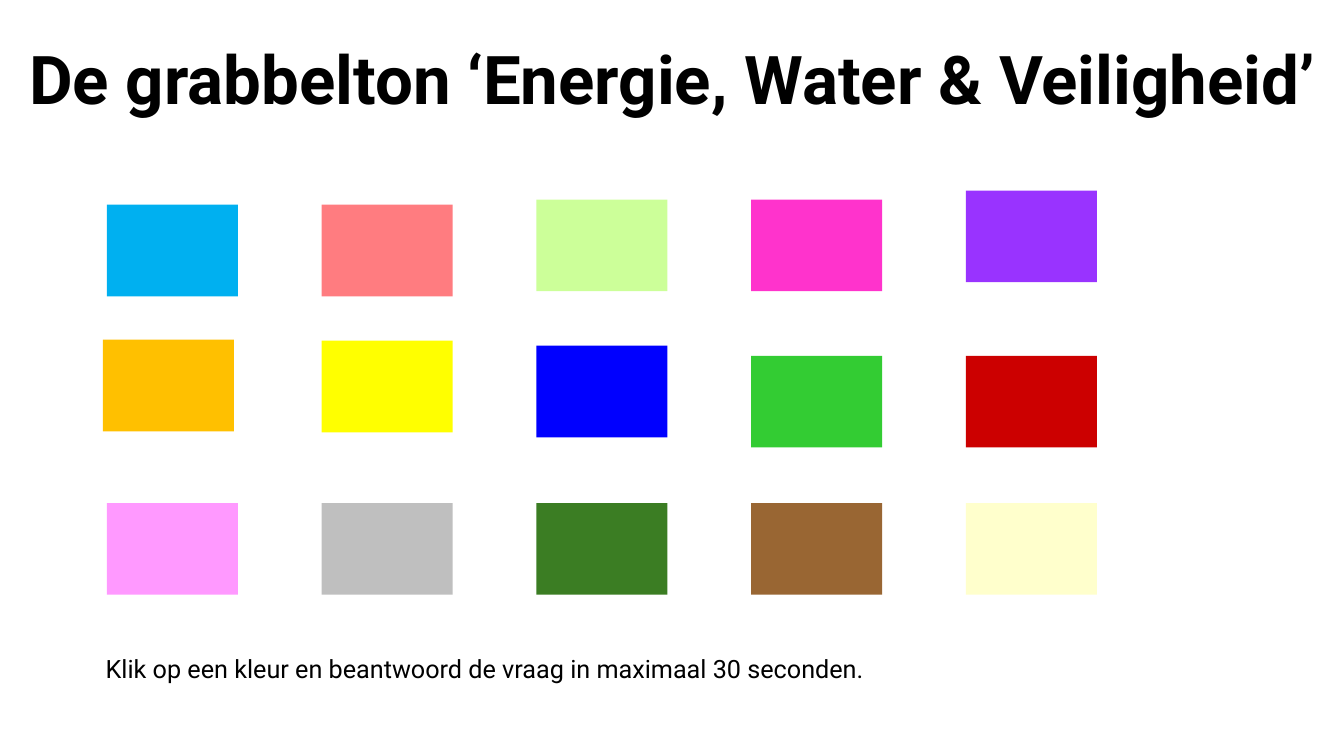
"""Build the colour grab-bag quiz slide on energy, water and safety."""
from dataclasses import dataclass

from pptx import Presentation
from pptx.dml.color import RGBColor
from pptx.enum.shapes import MSO_SHAPE
from pptx.enum.text import MSO_AUTO_SIZE, PP_ALIGN
from pptx.slide import Slide
from pptx.util import Inches, Pt

RECTANGLE = MSO_SHAPE.RECTANGLE
GROW = MSO_AUTO_SIZE.SHAPE_TO_FIT_TEXT
LEFT, CENTER = PP_ALIGN.LEFT, PP_ALIGN.CENTER

FONT = "Roboto"
COLORS = {
    "text": "000000", "sky": "00B0F0", "salmon": "FF7C80", "lime": "CCFF99",
    "magenta": "FF33CC", "purple": "9933FF", "orange": "FFC000",
    "yellow": "FFFF00", "blue": "0000FF", "green": "33CC33", "red": "CC0000",
    "pink": "FF99FF", "grey": "BFBFBF", "forest": "3B7D23",
    "brown": "996633", "cream": "FFFFCC",
}
GRID_LEFT, COLUMN_PITCH = 1.06, 2.13
CARD_WIDTH, CARD_HEIGHT = 1.3, 0.91


@dataclass(frozen=True)
class Card:
    color: str
    top: float
    shift: float = 0


@dataclass(frozen=True)
class Caption:
    text: str
    left: float
    top: float
    width: float
    height: float
    size: int
    bold: bool = False
    alignment: PP_ALIGN = LEFT


CARD_ROWS = [
    [Card("sky", 2.03), Card("salmon", 2.03), Card("lime", 1.98),
     Card("magenta", 1.98), Card("purple", 1.89)],
    [Card("orange", 3.37, -0.04), Card("yellow", 3.38), Card("blue", 3.43),
     Card("green", 3.53), Card("red", 3.53)],
    [Card(color, 4.99) for color in ("pink", "grey", "forest", "brown", "cream")],
]
CAPTIONS = [
    Caption("De grabbelton ‘Energie, Water & Veiligheid’",
            0.11, 0.32, 13.12, 0.91, 48, True, CENTER),
    Caption("Klik op een kleur en beantwoord de vraag in maximaal 30 seconden.",
            0.95, 6.43, 11.33, 0.4, 18),
]


def draw_card(slide: Slide, card: Card, column: int) -> None:
    left = GRID_LEFT + column * COLUMN_PITCH + card.shift
    shape = slide.shapes.add_shape(
        RECTANGLE, Inches(left), Inches(card.top),
        Inches(CARD_WIDTH), Inches(CARD_HEIGHT))
    shape.shadow.inherit = False
    shape.fill.solid()
    shape.fill.fore_color.rgb = RGBColor.from_string(COLORS[card.color])
    shape.line.fill.background()


def draw_caption(slide: Slide, caption: Caption) -> None:
    text_box = slide.shapes.add_textbox(
        Inches(caption.left), Inches(caption.top),
        Inches(caption.width), Inches(caption.height))
    text_frame = text_box.text_frame
    text_frame.word_wrap = True
    text_frame.auto_size = GROW
    text_frame.text = caption.text
    paragraph = text_frame.paragraphs[0]
    paragraph.alignment = caption.alignment
    font = paragraph.runs[0].font
    font.name = FONT
    font.size = Pt(caption.size)
    font.bold = caption.bold
    font.color.rgb = RGBColor.from_string(COLORS["text"])


def main() -> None:
    presentation = Presentation()
    presentation.slide_width = Inches(13.33)
    presentation.slide_height = Inches(7.5)
    slide = presentation.slides.add_slide(presentation.slide_layouts[6])
    for row in CARD_ROWS:
        for column, card in enumerate(row):
            draw_card(slide, card, column)
    for caption in CAPTIONS:
        draw_caption(slide, caption)
    presentation.save("out.pptx")


if __name__ == "__main__":
    main()
